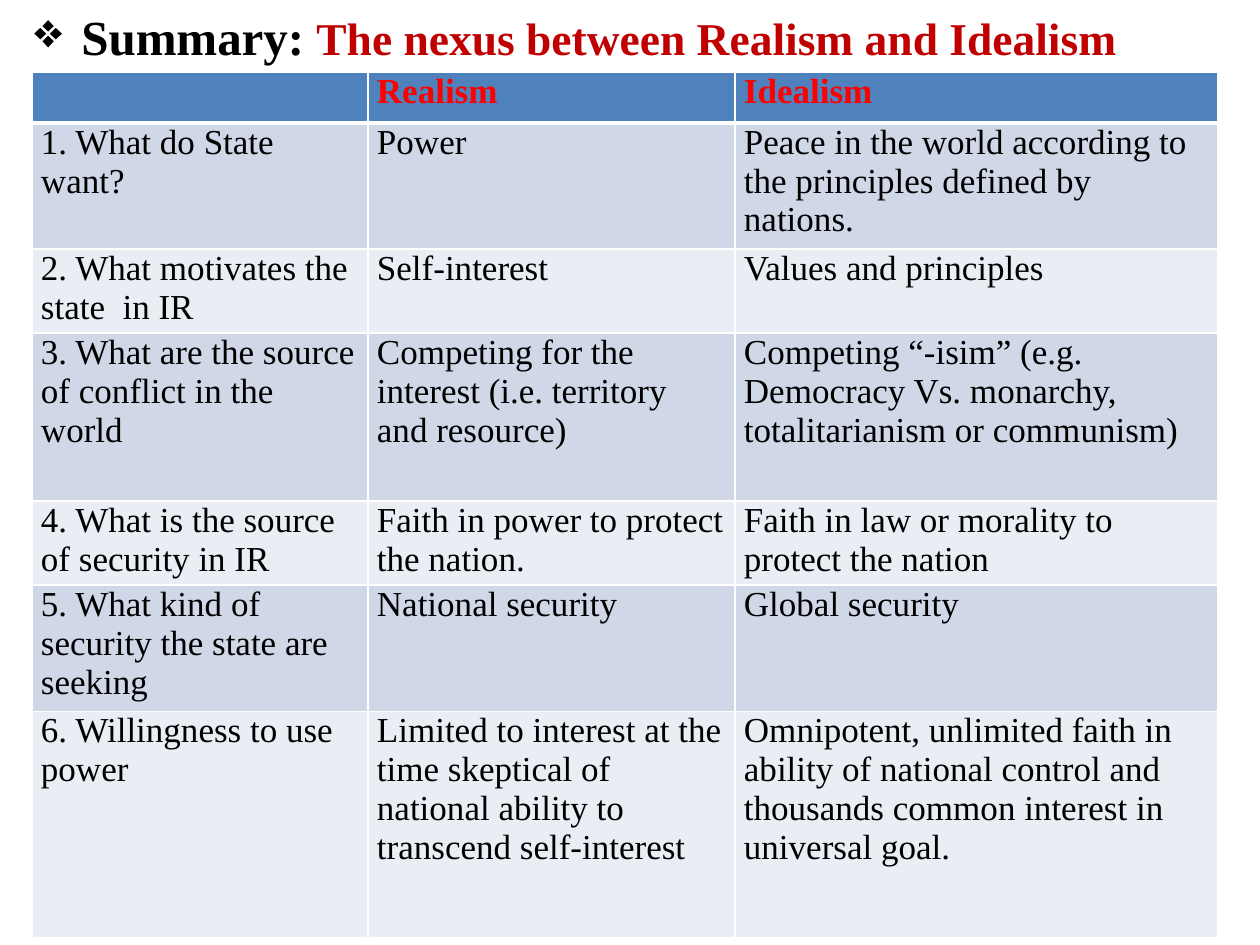
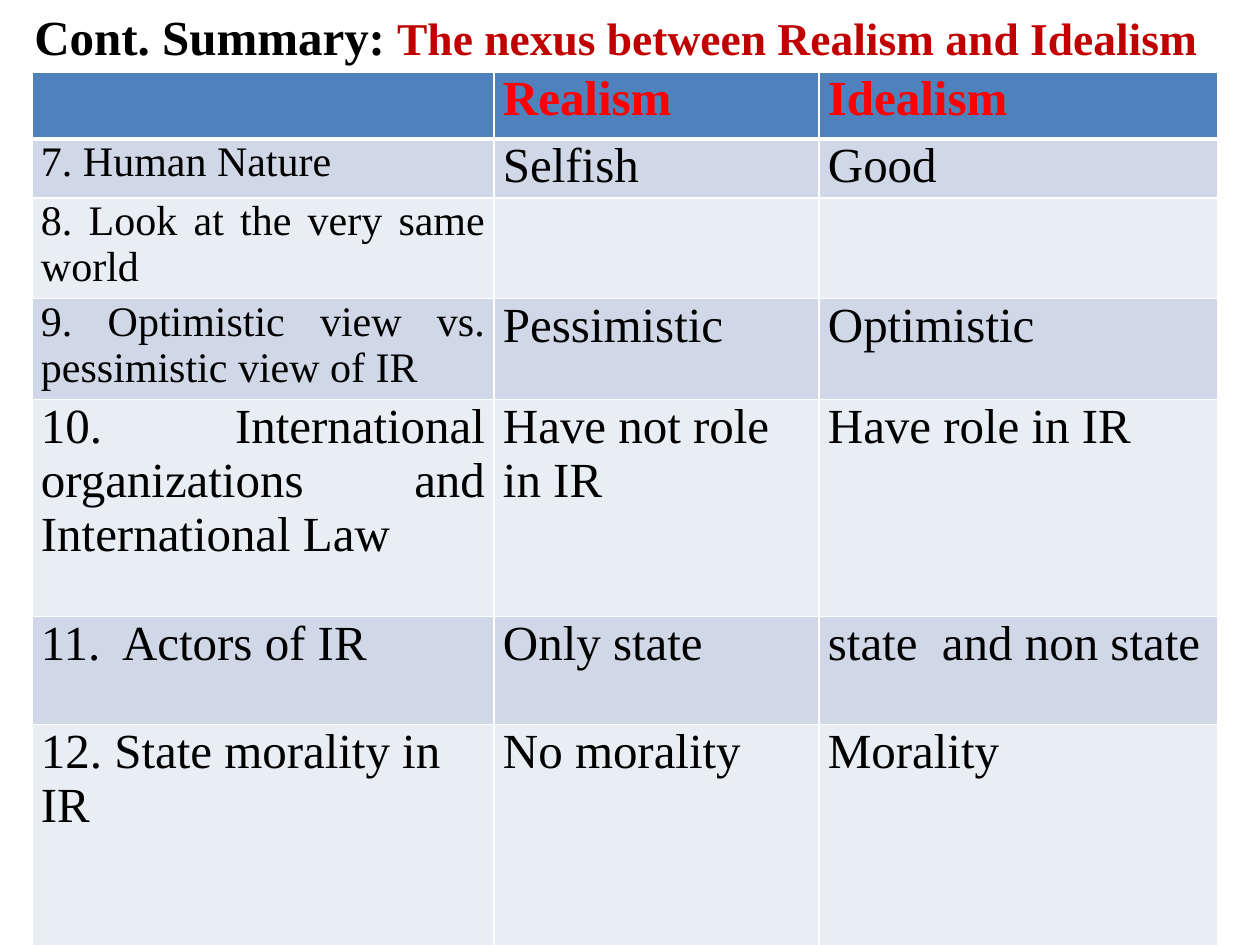
"""Build two slides that compare Realism and Idealism in tables."""
from lxml.etree import SubElement
from pptx import Presentation
from pptx.dml.color import RGBColor
from pptx.enum.text import PP_ALIGN
from pptx.oxml.ns import qn
from pptx.util import Pt

PX = 914400 / 126
FONT = "Times New Roman"
BLACK = RGBColor(0x00, 0x00, 0x00)
WHITE = RGBColor(0xFF, 0xFF, 0xFF)
CRIMSON = RGBColor(0xC0, 0x00, 0x00)
RED = RGBColor(0xFF, 0x00, 0x00)
BLUE = RGBColor(0x4F, 0x81, 0xBD)
BANDS = [RGBColor(0xE9, 0xED, 0xF4), RGBColor(0xD0, 0xD8, 0xE8)]

TOPIC = "The nexus between Realism and Idealism"
HEADER = ("", "Realism", "Idealism")
TITLE_BOX = (22, 0, 1232, 945)
TABLE_LEFT, TABLE_TOP = 32, 72

SLIDES = [
    {
        "lead": "Summary: ",
        "bullet": "❖",
        "size": 20,
        "small_questions": (),
        "justified_questions": (),
        "widths": (336, 367, 483),
        "heights": (51, 125, 82, 168, 83, 116, 226),
        "rows": [
            ("1. What do State want?", "Power",
             "Peace in the world according to the principles defined by nations."),
            ("2. What motivates the state  in IR", "Self-interest",
             "Values and principles"),
            ("3. What are the source of conflict in the world",
             "Competing for the interest (i.e. territory and resource)",
             "Competing “-isim” (e.g. Democracy Vs. monarchy, "
             "totalitarianism or communism)"),
            ("4. What is the source of security in IR",
             "Faith in power to protect the nation.",
             "Faith in law or morality to protect the nation"),
            ("5. What kind of security the state are seeking",
             "National security", "Global security"),
            ("6. Willingness to use power",
             "Limited to interest at the time skeptical of national ability "
             "to transcend self-interest",
             "Omnipotent, unlimited faith in ability of national control and "
             "thousands common interest in universal goal."),
        ],
    },
    {
        "lead": "Cont. Summary: ",
        "bullet": None,
        "size": 28,
        "small_questions": (1, 2, 3),
        "justified_questions": (2, 3, 4, 5),
        "widths": (462, 325, 399),
        "heights": (67, 54, 93, 93, 217, 108, 226),
        "rows": [
            ("7. Human Nature", "Selfish", "Good"),
            ("8. Look at the very same world", "", ""),
            ("9. Optimistic view vs. pessimistic view of IR",
             "Pessimistic", "Optimistic"),
            ("10. International organizations and International Law",
             "Have not role in IR", "Have role in IR"),
            ("11.  Actors of IR", "Only state", "state  and non state"),
            ("12. State morality in IR", "No morality", "Morality"),
        ],
    },
]


def px(n):
    return round(n * PX)


def add_run(p, text, size, color, bold):
    r = p.add_run()
    r.text = text
    r.font.name = FONT
    r.font.size = Pt(size)
    r.font.bold = bold
    r.font.color.rgb = color


def add_title(s, lead, bullet):
    tf = s.shapes.add_textbox(*map(px, TITLE_BOX)).text_frame
    tf.word_wrap = True
    p = tf.paragraphs[0]
    p.alignment = PP_ALIGN.JUSTIFY
    p.space_before = Pt(3)
    if bullet:
        pPr = p._p.get_or_add_pPr()
        pPr.set("marL", str(px(47)))
        pPr.set("indent", str(-px(47)))
        SubElement(pPr, qn("a:buChar"), char=bullet)
    add_run(p, lead, 28, BLACK, True)
    add_run(p, TOPIC, 26, CRIMSON, True)


def set_borders(cell, row):
    tcPr = cell._tc.get_or_add_tcPr()
    top, bottom = (3 if row == 1 else 1), (3 if row == 0 else 1)
    for side, width in zip("LRTB", (1, 1, top, bottom)):
        ln = SubElement(tcPr, qn(f"a:ln{side}"), w=str(Pt(width)))
        fill = SubElement(ln, qn("a:solidFill"))
        SubElement(fill, qn("a:srgbClr"), val=str(WHITE))


def fill_cell(cell, text, row, column, content):
    is_header = row == 0
    is_question = column == 0
    set_borders(cell, row)
    cell.fill.solid()
    cell.fill.fore_color.rgb = BLUE if is_header else BANDS[row % 2]
    cell.margin_left = cell.margin_right = px(9)
    cell.margin_top = cell.margin_bottom = 0
    if not text:
        return
    p = cell.text_frame.paragraphs[0]
    if is_header or is_question and row in content["justified_questions"]:
        p.alignment = PP_ALIGN.JUSTIFY
    small = is_question and row in content["small_questions"]
    size = 24 if small else content["size"]
    add_run(p, text, size, RED if is_header else BLACK, is_header)


def add_comparison(s, content):
    rows = [HEADER, *content["rows"]]
    widths, heights = content["widths"], content["heights"]
    table = s.shapes.add_table(
        len(rows), len(widths), px(TABLE_LEFT), px(TABLE_TOP),
        px(sum(widths)), px(sum(heights))).table
    for column, width in zip(table.columns, widths):
        column.width = px(width)
    for i, (texts, height) in enumerate(zip(rows, heights)):
        table.rows[i].height = px(height)
        for j, text in enumerate(texts):
            fill_cell(table.cell(i, j), text, i, j, content)


def main():
    prs = Presentation()
    prs.slide_width, prs.slide_height = px(1260), px(945)
    for content in SLIDES:
        s = prs.slides.add_slide(prs.slide_layouts[6])
        add_title(s, content["lead"], content["bullet"])
        add_comparison(s, content)
    prs.save("out.pptx")


if __name__ == "__main__":
    main()
